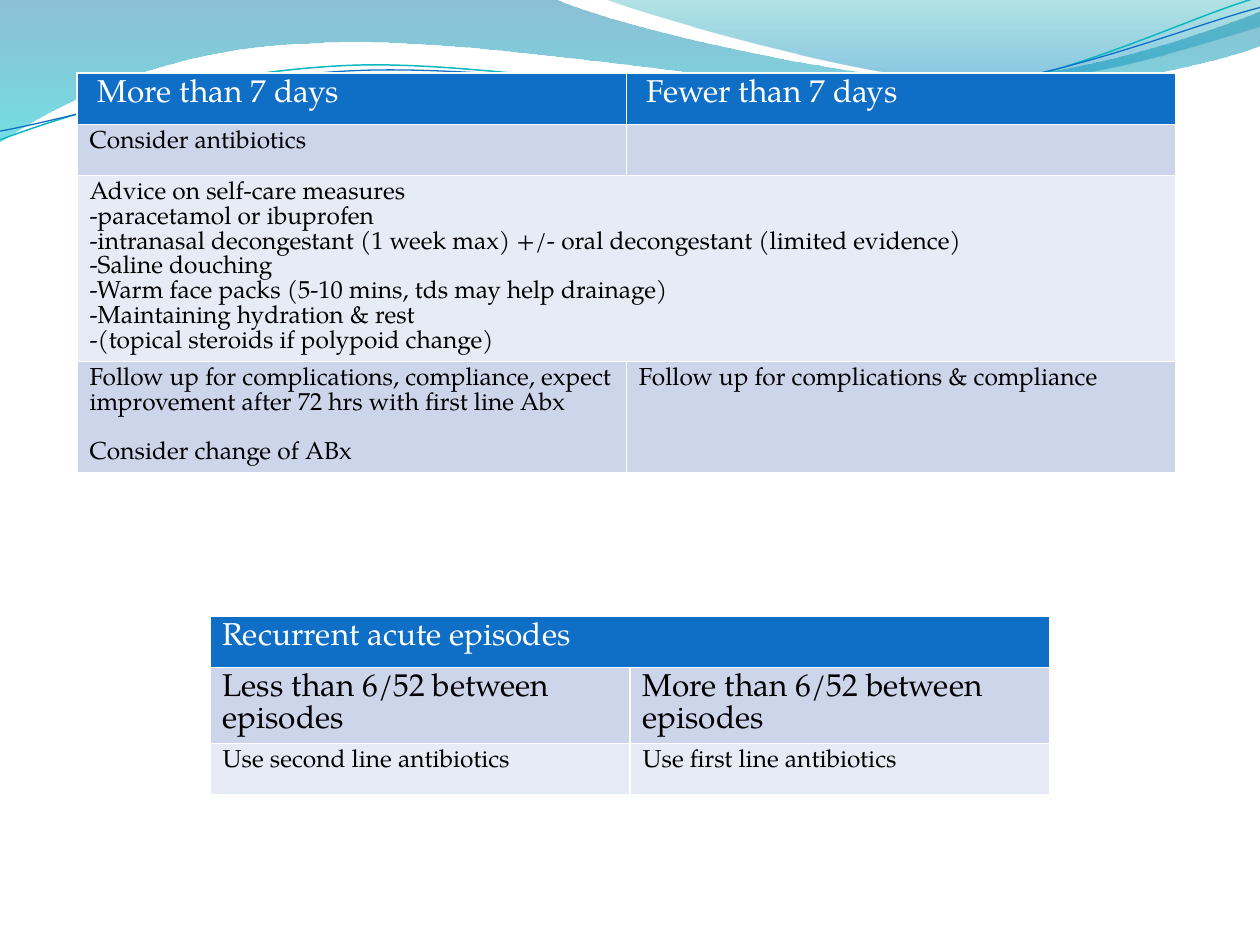
import pptx
import pptx.dml.color
import pptx.oxml
import pptx.oxml.ns
import pptx.util

Pt = pptx.util.Pt
RGBColor = pptx.dml.color.RGBColor
qn = pptx.oxml.ns.qn

FONT = "TeX Gyre Pagella"
WHITE = RGBColor(0xFF, 0xFF, 0xFF)
BLACK = RGBColor(0x00, 0x00, 0x00)
BLUE = RGBColor(0x0F, 0x6F, 0xC6)
TURQUOISE = RGBColor(0x0A, 0xB8, 0xBF)
BAND_DARK = RGBColor(0xCC, 0xD5, 0xEA)
BAND_LIGHT = RGBColor(0xE7, 0xEB, 0xF5)
DEEP_BLUE = RGBColor(0x00, 0x74, 0xA1)
AQUA = RGBColor(0x00, 0xC6, 0xCF)
TEAL = RGBColor(0x00, 0xA1, 0xA9)
SKY = RGBColor(0x00, 0x8B, 0xBF)
ROW_HEIGHT = 29.2

LEFT_WAVE = [
    (0, 0), (316.8, -0.7),
    (342.7, 12.2, 478.1, 45.4, 545.8, 45.4), (614.2, 45.4, 689.8, 18.7, 720, 6.5),
    (720.7, 25.9),
    (707.8, 31.7, 626.4, 54.7, 537.1, 54), (447.8, 54, 275, 20.2, 185, 24.5),
    (92.9, 25.9, 33.1, 59.8, -0.7, 81.4),
]
RIGHT_WAVE = [
    (344.9, -0.7),
    (366.5, 7.9, 491, 44.6, 553.7, 46.8), (616.3, 49.7, 691.9, 23, 720, 15.1),
    (720, 0),
]
TURQUOISE_STRAND = [
    (0, 79.9), (34.6, 67, 113.8, 41, 199.4, 37.4),
    (284.4, 33.8, 427, 64.1, 513.4, 57.6), (599.8, 51.1, 675.4, 10.8, 718.6, -1.4),
]
BLUE_STRAND = [
    (0, 74.9), (33.8, 69.1, 118.1, 44, 203.8, 40.3),
    (290.2, 36.7, 429.8, 60.5, 516.2, 54), (601.9, 48.2, 677.5, 15.1, 720, 4.3),
]

DURATION_ROWS = [
    [" More than 7 days", " Fewer than 7 days"],
    ["Consider antibiotics", ""],
    ["Advice on self-care measures\n-paracetamol or ibuprofen\n"
     "-intranasal decongestant (1 week max) +/- oral decongestant (limited evidence)\n"
     "-Saline douching\n-Warm face packs (5-10 mins, tds may help drainage)\n"
     "-Maintaining hydration & rest\n-(topical steroids if polypoid change)"],
    ["Follow up for complications, compliance, expect improvement after 72 hrs "
     "with first line Abx\nConsider change of ABx",
     "Follow up for complications & compliance"],
]
RECURRENT_ROWS = [
    ["Recurrent acute episodes"],
    ["Less than 6/52 between episodes", "More than 6/52 between episodes"],
    ["Use second line antibiotics", "Use first line antibiotics"],
]


def add_outline(slide, segments, close):
    """Draw an outline of straight segments and cubic curves."""
    start, *rest = segments
    corners = [(Pt(x), Pt(y)) for segment in rest
               for x, y in zip(segment[::2], segment[1::2])]
    builder = slide.shapes.build_freeform(Pt(start[0]), Pt(start[1]))
    builder.add_line_segments(corners, close=close)
    outline = builder.convert_to_shape()
    outline.shadow.inherit = False
    steps = iter(outline._element.findall(".//" + qn("a:lnTo")))
    for segment in rest:
        step = next(steps)
        if len(segment) == 6:
            curve = pptx.oxml.parse_xml(
                f'<a:cubicBezTo {pptx.oxml.ns.nsdecls("a")}/>')
            step.addprevious(curve)
            for control in (step, next(steps), next(steps)):
                curve.append(control[0])
                control.getparent().remove(control)
    return outline


def add_wave(slide, segments, stops):
    """Add a translucent wave with a downward gradient."""
    wave = add_outline(slide, segments, True)
    wave.line.fill.background()
    wave.fill.gradient()
    wave.fill.gradient_angle = 270
    for stop, (position, color, _) in zip(wave.fill.gradient_stops, stops):
        stop.position = position
        stop.color.rgb = color
    tints = wave._element.spPr.findall(".//" + qn("a:srgbClr"))
    for tint, (_, _, opacity) in zip(tints, stops):
        tint.append(pptx.oxml.parse_xml(
            f'<a:alpha {pptx.oxml.ns.nsdecls("a")} val="{opacity * 1000}"/>'))


def add_strand(slide, segments, color, width):
    """Add a thin curved line."""
    strand = add_outline(slide, segments, False)
    strand.fill.background()
    strand.line.color.rgb = color
    strand.line.width = Pt(width)


def write_cell(cell, text, size, color):
    """Write and format the text of a cell."""
    cell.text_frame.text = text
    for paragraph in cell.text_frame.paragraphs:
        paragraph.font.size = Pt(size)
        for run in paragraph.runs:
            run.font.name = FONT
            run.font.size = Pt(size)
            run.font.bold = False
            run.font.color.rgb = color


def add_advice_table(slide, left, top, width, height, rows, sizes):
    """Add a two-column banded table; a row with one text spans both columns."""
    frame = slide.shapes.add_table(
        len(rows), 2, Pt(left), Pt(top), Pt(width), Pt(height))
    table = frame.table
    for index, (texts, size) in enumerate(zip(rows, sizes)):
        table.rows[index].height = Pt(ROW_HEIGHT)
        band = BLUE if index == 0 else (BAND_LIGHT, BAND_DARK)[index % 2]
        for column in range(2):
            cell = table.cell(index, column)
            cell.fill.solid()
            cell.fill.fore_color.rgb = band
        if len(texts) == 1:
            table.cell(index, 0).merge(table.cell(index, 1))
        for column, text in enumerate(texts):
            write_cell(table.cell(index, column), text, size, BLACK if index else WHITE)
    frame.height = Pt(height)
    return table


def main():
    """Build the slide and save it."""
    deck = pptx.Presentation()
    deck.slide_width, deck.slide_height = Pt(720), Pt(540)
    slide = deck.slides.add_slide(deck.slide_layouts[6])
    add_wave(slide, LEFT_WAVE, [(0, DEEP_BLUE, 45), (1, AQUA, 55)])
    add_wave(slide, RIGHT_WAVE, [(0, TEAL, 30), (0.8, SKY, 45)])
    add_strand(slide, TURQUOISE_STRAND, TURQUOISE, 0.85)
    add_strand(slide, BLUE_STRAND, BLUE, 0.75)
    duration = add_advice_table(slide, 44, 41.8, 627.8, 257.8,
                                DURATION_ROWS, [18, 14, 14, 14])
    duration.cell(3, 0).text_frame.paragraphs[1].space_before = Pt(14)
    add_advice_table(slide, 120, 352.1, 480, 108.7, RECURRENT_ROWS, [18, 18, 14])
    deck.save("out.pptx")


if __name__ == "__main__":
    main()
